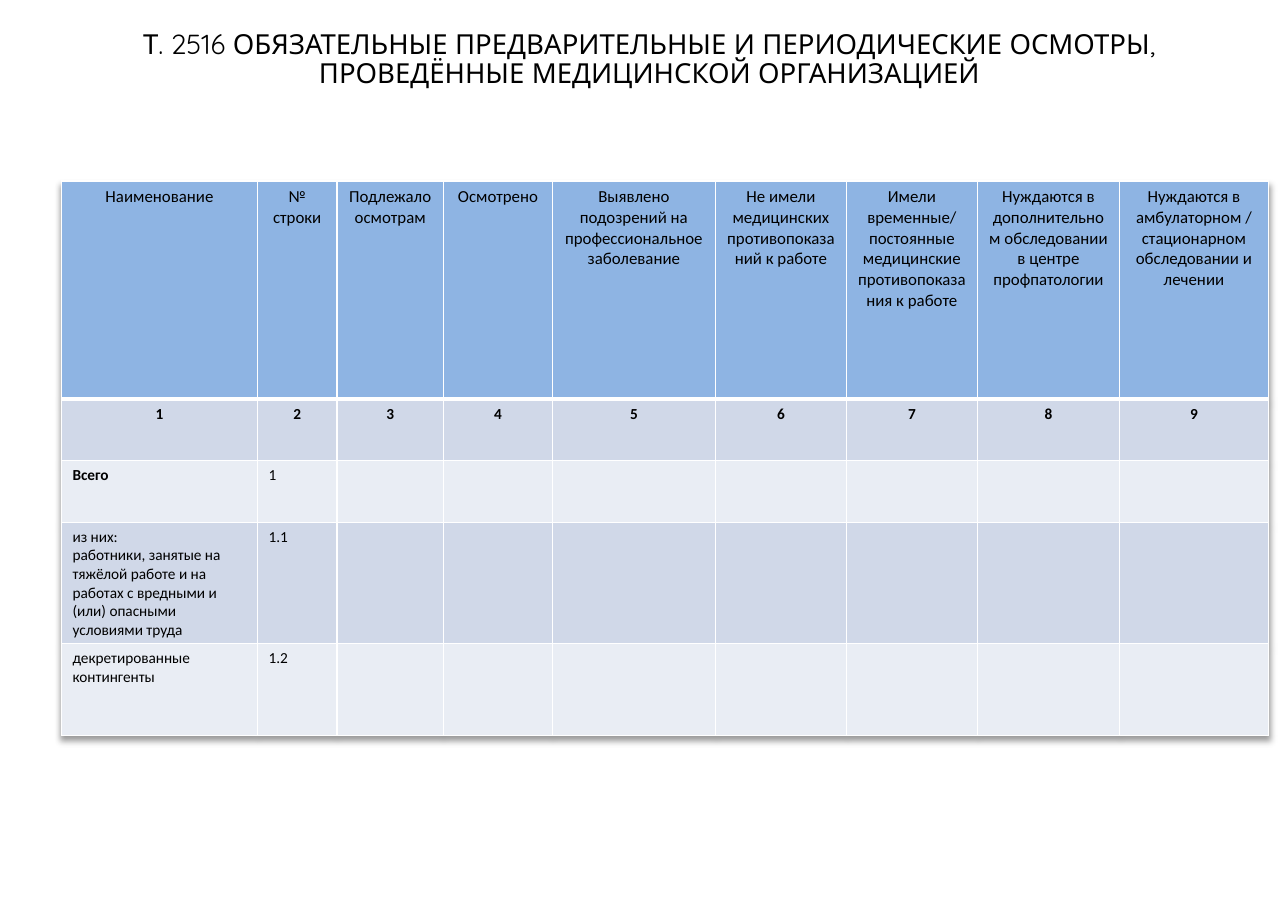
from lxml.etree import SubElement
from pptx import Presentation
from pptx.dml.color import RGBColor
from pptx.enum.text import MSO_ANCHOR, PP_ALIGN
from pptx.oxml import parse_xml
from pptx.oxml.ns import nsdecls, qn
from pptx.util import Cm, Pt

COLORS = {
    "text": "000000",
    "header": "8EB4E3",
    "dark_band": "D0D8E8",
    "light_band": "E9EDF4",
    "border": "FFFFFF",
}
TITLE = (
    "Т. 2516 ОБЯЗАТЕЛЬНЫЕ ПРЕДВАРИТЕЛЬНЫЕ И ПЕРИОДИЧЕСКИЕ ОСМОТРЫ, "
    "ПРОВЕДЁННЫЕ МЕДИЦИНСКОЙ ОРГАНИЗАЦИЕЙ"
)
HEADERS = [
    "Наименование",
    "№ строки",
    "Подлежало осмотрам",
    "Осмотрено",
    "Выявлено подозрений на профессиональное заболевание",
    "Не имели медицинских противопоказаний к работе",
    "Имели временные/ постоянные медицинские противопоказания к работе",
    "Нуждаются в дополнительном обследовании в центре профпатологии",
    "Нуждаются в амбулаторном / стационарном обследовании и лечении",
]
ROWS = [
    HEADERS,
    [str(n) for n in range(1, len(HEADERS) + 1)],
    ["Всего", "1"],
    [
        "из них:\vработники, занятые на тяжёлой работе и на работах "
        "с вредными и (или) опасными условиями труда",
        "1.1",
    ],
    ["декретированные контингенты", "1.2"],
]
COL_WIDTHS = [4.52, 1.83, 2.46, 2.51, 3.76, 3.02, 3.02, 3.28, 3.43]
ROW_HEIGHTS = [5.03, 1.42, 1.42, 2.57, 2.11]


def write_text(tf, text, size=10, font="Calibri", bold=False,
               align=PP_ALIGN.LEFT, spacing=1.0):
    tf.word_wrap = True
    p = tf.paragraphs[0]
    p.text = text
    p.alignment = align
    p.line_spacing = spacing
    for r in p.runs:
        r.font.size = Pt(size)
        r.font.name = font
        r.font.bold = bold
        r.font.color.rgb = RGBColor.from_string(COLORS["text"])


def add_title(s):
    sp = s.shapes.add_textbox(Cm(1.73), Cm(0.7), Cm(26.49), Cm(2.06))
    tf = sp.text_frame
    tf.vertical_anchor = MSO_ANCHOR.TOP
    tf.margin_top = 0
    write_text(tf, TITLE, size=18, font="Quicksand",
               align=PP_ALIGN.CENTER, spacing=0.9)


def set_borders(cell, widths):
    tcPr = cell._tc.get_or_add_tcPr()
    for i, (side, width) in enumerate(widths.items()):
        ln = parse_xml(f'<a:ln{side} {nsdecls("a")} w="{Pt(width)}"/>')
        fill = SubElement(ln, qn("a:solidFill"))
        SubElement(fill, qn("a:srgbClr"), val=COLORS["border"])
        tcPr.insert(i, ln)


def add_table_shadow(table):
    table._tbl.tblPr.insert(0, parse_xml(
        f'<a:effectLst {nsdecls("a")}>'
        '<a:outerShdw blurRad="50800" dist="38100" dir="5400000" algn="t" rotWithShape="0">'
        '<a:srgbClr val="000000"><a:alpha val="40000"/></a:srgbClr>'
        '</a:outerShdw></a:effectLst>'
    ))


def add_checkup_table(s):
    table = s.shapes.add_table(
        len(ROWS), len(HEADERS), Cm(1.42), Cm(4.17),
        Cm(sum(COL_WIDTHS)), Cm(sum(ROW_HEIGHTS)),
    ).table
    add_table_shadow(table)
    for column, width in zip(table.columns, COL_WIDTHS):
        column.width = Cm(width)
    for i, (row, height) in enumerate(zip(table.rows, ROW_HEIGHTS)):
        row.height = Cm(height)
        band = "header" if i == 0 else "dark_band" if i % 2 else "light_band"
        texts = ROWS[i] + [""] * (len(HEADERS) - len(ROWS[i]))
        for j, (cell, text) in enumerate(zip(row.cells, texts)):
            cell.fill.solid()
            cell.fill.fore_color.rgb = RGBColor.from_string(COLORS[band])
            set_borders(cell, {
                "L": 1, "R": 1,
                "T": 3 if i == 1 else 1,
                "B": 3 if i == 0 else 1,
            })
            write_text(
                cell.text_frame, text,
                size=11 if i == 0 else 10,
                bold=i == 1 or (i == 2 and j == 0),
                align=PP_ALIGN.CENTER if i < 2 else PP_ALIGN.LEFT,
            )


def main():
    prs = Presentation()
    prs.slide_width = Cm(29.7)
    prs.slide_height = Cm(21)
    s = prs.slides.add_slide(prs.slide_layouts[6])
    add_title(s)
    add_checkup_table(s)
    prs.save("out.pptx")


if __name__ == "__main__":
    main()
